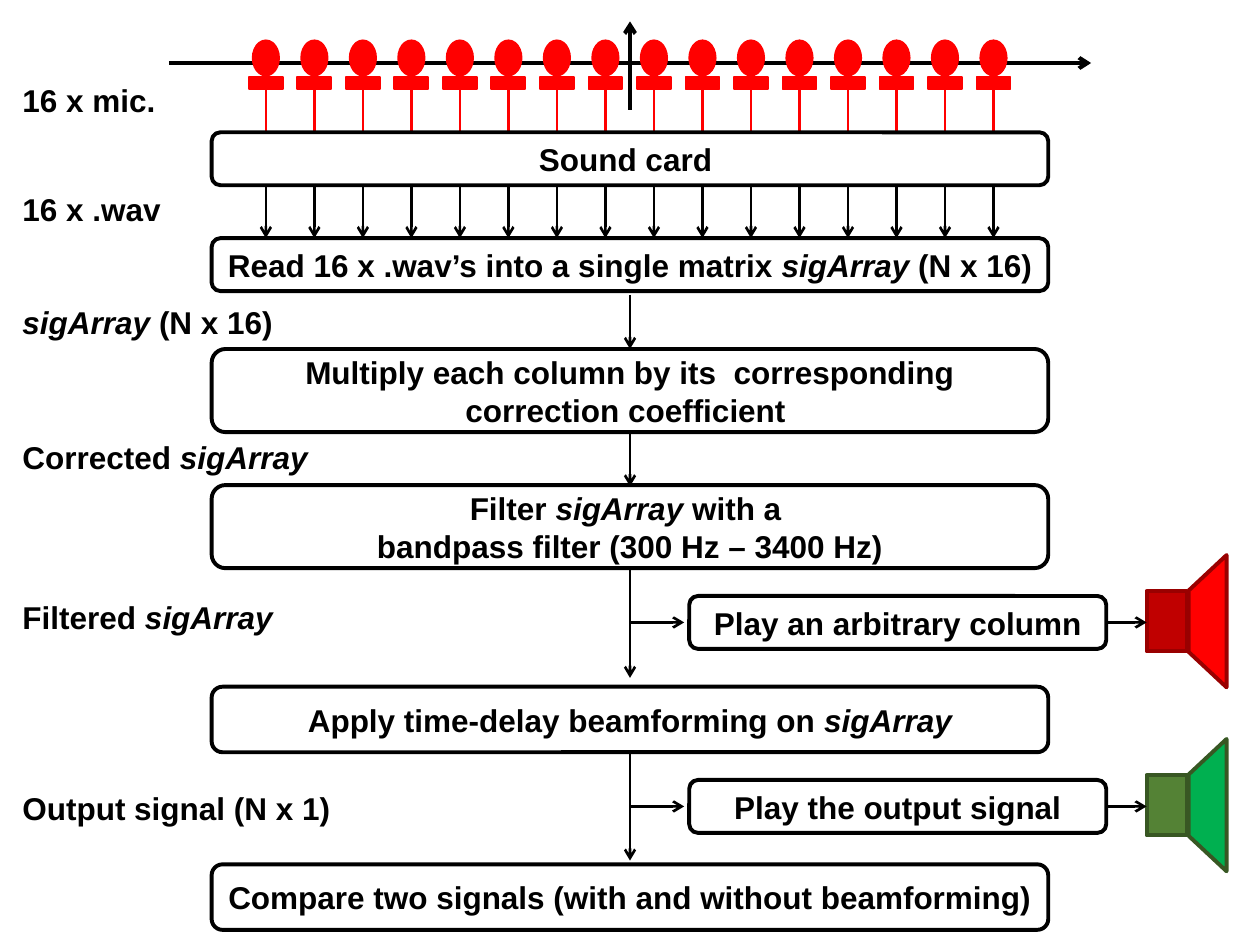
from dataclasses import dataclass

from lxml import etree
from pptx import Presentation
from pptx.dml.color import RGBColor
from pptx.enum.shapes import MSO_CONNECTOR, MSO_SHAPE
from pptx.enum.text import MSO_ANCHOR, MSO_AUTO_SIZE, PP_ALIGN
from pptx.oxml.ns import qn
from pptx.util import Inches, Pt

STRAIGHT = MSO_CONNECTOR.STRAIGHT
RECT = MSO_SHAPE.RECTANGLE
ROUND = MSO_SHAPE.ROUNDED_RECTANGLE
CIRCLE = MSO_SHAPE.FLOWCHART_CONNECTOR
TRAPEZOID = MSO_SHAPE.TRAPEZOID
CENTER, LEFT = PP_ALIGN.CENTER, PP_ALIGN.LEFT
MIDDLE = MSO_ANCHOR.MIDDLE
GROW = MSO_AUTO_SIZE.SHAPE_TO_FIT_TEXT


@dataclass(frozen=True)
class Theme:
    """Colours, font and sizes of the slide."""
    ink: str = "000000"
    paper: str = "FFFFFF"
    mic: str = "FF0000"
    red: tuple = ("FF0000", "C00000", "990000")
    green: tuple = ("00B050", "548235", "385723")
    font: str = "Arial"
    size: int = 18
    heavy: float = 2.25
    medium: float = 1.5
    thin: float = 1


THEME = Theme()
MIC_COUNT, MIC_LEFT, MIC_STEP = 16, 2.11, 0.385
MIC_XS = [MIC_LEFT + i * MIC_STEP for i in range(MIC_COUNT)]
MID, BOX_LEFT, BOX_WIDTH = 5, 1.68, 6.64

STEPS = [
    (1.05, 0.42, "Sound card "),
    (1.89, 0.42, "Read 16 x .wav’s into a single matrix *sigArray* (N x 16) "),
    (2.77, 0.66, "Multiply each column by its  corresponding correction coefficient "),
    (3.85, 0.66, "Filter *sigArray* with a \nbandpass filter (300 Hz – 3400 Hz)"),
    (5.45, 0.52, "Apply time-delay beamforming on *sigArray*"),
    (6.86, 0.52, "Compare two signals (with and without beamforming)"),
]
LABELS = [
    (0.59, 1.27, "16 x mic."),
    (1.46, 1.31, "16 x .wav"),
    (2.36, 2.21, "*sigArray* (N x 16)"),
    (3.43, 2.56, "Corrected *sigArray*"),
    (4.7, 2.28, "Filtered *sigArray*"),
    (6.21, 2.74, "Output signal (N x 1)"),
]
FLOWS = [(2.34, 2.77), (3.42, 3.86), (4.51, 5.38), (5.97, 6.83)]
PLAYBACKS = [
    (4.94, "Play an arbitrary column", THEME.red),
    (6.4, "Play the output signal", THEME.green),
]


def add_text(tf, text, align=LEFT):
    """Fill a text frame, with words between asterisks in italics."""
    for i, line in enumerate(text.split("\n")):
        p = tf.paragraphs[0] if i == 0 else tf.add_paragraph()
        p.alignment = align
        for j, part in enumerate(line.split("*")):
            if part:
                r = p.add_run()
                r.text = part
                r.font.name, r.font.size = THEME.font, Pt(THEME.size)
                r.font.bold, r.font.italic = True, j % 2 == 1
                r.font.color.rgb = RGBColor.from_string(THEME.ink)


def add_shape(s, kind, x, y, w, h, fill, line, width=THEME.heavy, rotation=0):
    """Add a filled and outlined preset shape."""
    sp = s.shapes.add_shape(kind, Inches(x), Inches(y), Inches(w), Inches(h))
    sp.shadow.inherit = False
    sp.rotation = rotation
    sp.fill.solid()
    sp.fill.fore_color.rgb = RGBColor.from_string(fill)
    sp.line.color.rgb = RGBColor.from_string(line)
    sp.line.width = Pt(width)
    return sp


def add_line(s, x1, y1, x2, y2, color=THEME.ink, width=THEME.medium, arrow=True):
    """Add a straight line, by default with an arrowhead at its end."""
    cx = s.shapes.add_connector(STRAIGHT, Inches(x1), Inches(y1), Inches(x2), Inches(y2))
    cx.line.color.rgb = RGBColor.from_string(color)
    cx.line.width = Pt(width)
    if arrow:
        etree.SubElement(cx.line._get_or_add_ln(), qn("a:tailEnd"), type="arrow")
    etree.SubElement(cx._element.spPr, qn("a:effectLst"))


def add_box(s, x, y, w, h, text):
    """Add a rounded process box with centred text."""
    sp = add_shape(s, ROUND, x, y, w, h, THEME.paper, THEME.ink)
    sp.text_frame.word_wrap = True
    sp.text_frame.vertical_anchor = MIDDLE
    add_text(sp.text_frame, text, CENTER)


def add_label(s, y, w, text):
    """Add a data label at the left edge."""
    tb = s.shapes.add_textbox(Inches(0.08), Inches(y), Inches(w), Inches(0.4))
    tb.text_frame.word_wrap = False
    tb.text_frame.auto_size = GROW
    add_text(tb.text_frame, text)


def add_mic(s, x):
    """Add a microphone centred on x, with its cable."""
    for kind, y, w, h in ((CIRCLE, 0.32, 0.21, 0.28), (RECT, 0.61, 0.27, 0.1)):
        add_shape(s, kind, x - w / 2, y, w, h, THEME.mic, THEME.mic, THEME.thin)
    add_line(s, x, 0.7, x, 1.13, THEME.mic, arrow=False)


def add_speaker(s, y, colors):
    """Add a loudspeaker centred on y."""
    cone, body, edge = colors
    sp = add_shape(s, TRAPEZOID, 9.06, y - 0.01 - 0.15, 1.05, 0.3, cone, edge, rotation=270)
    sp.adjustments[0] = 0.935
    add_shape(s, RECT, 9.02, y - 0.01 - 0.16, 0.48, 0.32, body, edge, rotation=270)


def add_playback(s, y, text, colors):
    """Add a side branch that ends in a loudspeaker."""
    add_line(s, MID, y, 5.43, y)
    add_box(s, 5.47, y - 0.21, 3.31, 0.42, text)
    add_speaker(s, y, colors)
    add_line(s, 8.78, y, 9.1, y)


def main():
    """Build the beamforming flow chart."""
    prs = Presentation()
    prs.slide_width, prs.slide_height = Inches(10), Inches(7.5)
    s = prs.slides.add_slide(prs.slide_layouts[6])
    add_line(s, MID, 0.87, MID, 0.17, width=THEME.heavy)
    add_line(s, 1.34, 0.5, 8.66, 0.5, width=THEME.heavy)
    for x in MIC_XS:
        add_mic(s, x)
    for y, h, text in STEPS:
        add_box(s, BOX_LEFT, y, BOX_WIDTH, h, text)
    for x in MIC_XS:
        add_line(s, x, 1.46, x, 1.89)
    for top, bottom in FLOWS:
        add_line(s, MID, top, MID, bottom)
    for playback in PLAYBACKS:
        add_playback(s, *playback)
    for label in LABELS:
        add_label(s, *label)
    prs.save("out.pptx")


if __name__ == "__main__":
    main()
